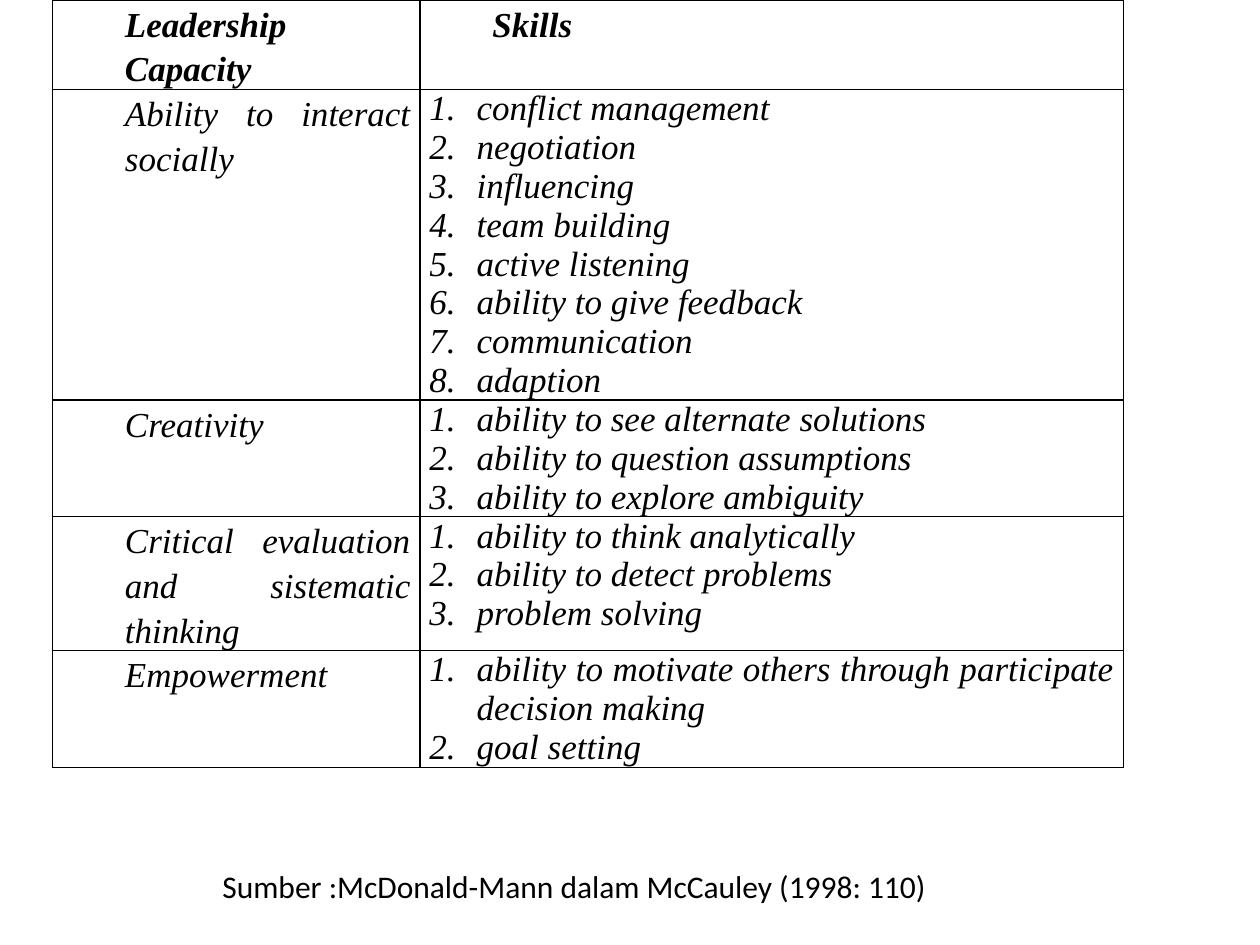
from dataclasses import dataclass

from lxml.etree import SubElement
from pptx import Presentation
from pptx.dml.color import RGBColor
from pptx.enum.text import MSO_AUTO_SIZE, PP_ALIGN
from pptx.oxml import parse_xml
from pptx.oxml.ns import nsdecls, qn
from pptx.util import Pt

COLORS = {"ink": "000000"}
TABLE_FONT = "Times New Roman"
SOURCE_FONT = "Calibri"
COLUMN_WIDTHS = (210, 402)


@dataclass(frozen=True)
class Capacity:
    name: str
    skills: tuple[str, ...]
    height: float


CAPACITIES = (
    Capacity("Ability to interact socially", (
        "conflict management", "negotiation", "influencing", "team building",
        "active listening", "ability to give feedback", "communication", "adaption",
    ), 144),
    Capacity("Creativity", (
        "ability to see alternate solutions",
        "ability to question assumptions",
        "ability to explore ambiguity",
    ), 54),
    Capacity("Critical evaluation and sistematic thinking", (
        "ability to think analytically", "ability to detect problems", "problem solving",
    ), 54),
    Capacity("Empowerment", (
        "ability to motivate others through participate decision making", "goal setting",
    ), 54),
)


def add_run(paragraph, text: str, font_name: str, size: float,
            bold: bool = False, italic: bool = False) -> None:
    run = paragraph.add_run()
    run.text = text
    run.font.name = font_name
    run.font.size = Pt(size)
    run.font.bold = bold
    run.font.italic = italic
    run.font.color.rgb = RGBColor.from_string(COLORS["ink"])


def style_cell(cell) -> None:
    cell.margin_left = cell.margin_right = Pt(5.4)
    cell.margin_top = cell.margin_bottom = Pt(0)
    cell.fill.background()
    properties = cell._tc.get_or_add_tcPr()
    for position, side in enumerate(("lnL", "lnR", "lnT", "lnB")):
        properties.insert(position, parse_xml(
            f'<a:{side} {nsdecls("a")} w="{Pt(1)}"><a:solidFill>'
            f'<a:srgbClr val="{COLORS["ink"]}"/></a:solidFill></a:{side}>'
        ))


def write_cell(cell, texts: tuple[str, ...], numbered: bool = False, bold: bool = False) -> None:
    style_cell(cell)
    frame = cell.text_frame
    for index, text in enumerate(texts):
        paragraph = frame.add_paragraph() if index else frame.paragraphs[0]
        paragraph.alignment = PP_ALIGN.JUSTIFY
        properties = paragraph._p.get_or_add_pPr()
        if numbered:
            properties.set("marL", str(Pt(27)))
            properties.set("indent", str(Pt(-27)))
            SubElement(properties, qn("a:buFont"), typeface="+mj-lt")
            SubElement(properties, qn("a:buAutoNum"), type="arabicPeriod")
        else:
            properties.set("marL", str(Pt(36)))
            properties.set("indent", "0")
            paragraph.line_spacing = 1.15
        add_run(paragraph, text, TABLE_FONT, 20, bold, italic=True)


def add_capacity_table(slide) -> None:
    shape = slide.shapes.add_table(
        len(CAPACITIES) + 1, len(COLUMN_WIDTHS), Pt(30), Pt(0), Pt(sum(COLUMN_WIDTHS)), Pt(470))
    table = shape.table
    table.first_row = table.horz_banding = False
    for column, width in zip(table.columns, COLUMN_WIDTHS):
        column.width = Pt(width)
    table.rows[0].height = Pt(36)
    for index, heading in enumerate(("Leadership Capacity", "Skills")):
        write_cell(table.cell(0, index), (heading,), bold=True)
    for index, capacity in enumerate(CAPACITIES, start=1):
        table.rows[index].height = Pt(capacity.height)
        write_cell(table.cell(index, 0), (capacity.name,))
        write_cell(table.cell(index, 1), capacity.skills, numbered=True)
    shape.height = Pt(470)


def add_source(slide) -> None:
    frame = slide.shapes.add_textbox(Pt(120), Pt(492), Pt(422), Pt(29)).text_frame
    frame.word_wrap = False
    frame.auto_size = MSO_AUTO_SIZE.SHAPE_TO_FIT_TEXT
    add_run(frame.paragraphs[0], "Sumber :McDonald-Mann dalam McCauley (1998: 110)", SOURCE_FONT, 18)


def main() -> None:
    """Build the slide of leadership capacities and their skills."""
    presentation = Presentation()
    presentation.slide_width = Pt(720)
    presentation.slide_height = Pt(540)
    slide = presentation.slides.add_slide(presentation.slide_layouts[6])
    add_capacity_table(slide)
    add_source(slide)
    presentation.save("out.pptx")


if __name__ == "__main__":
    main()
